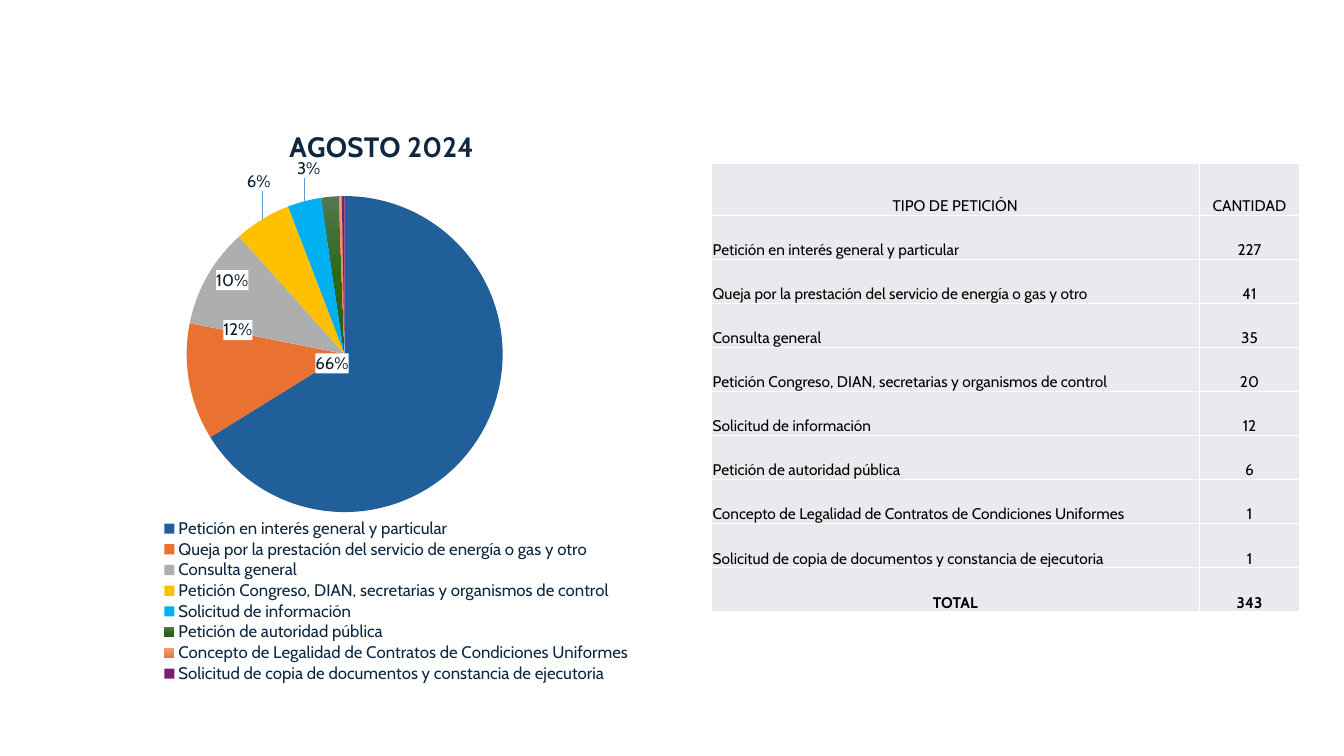
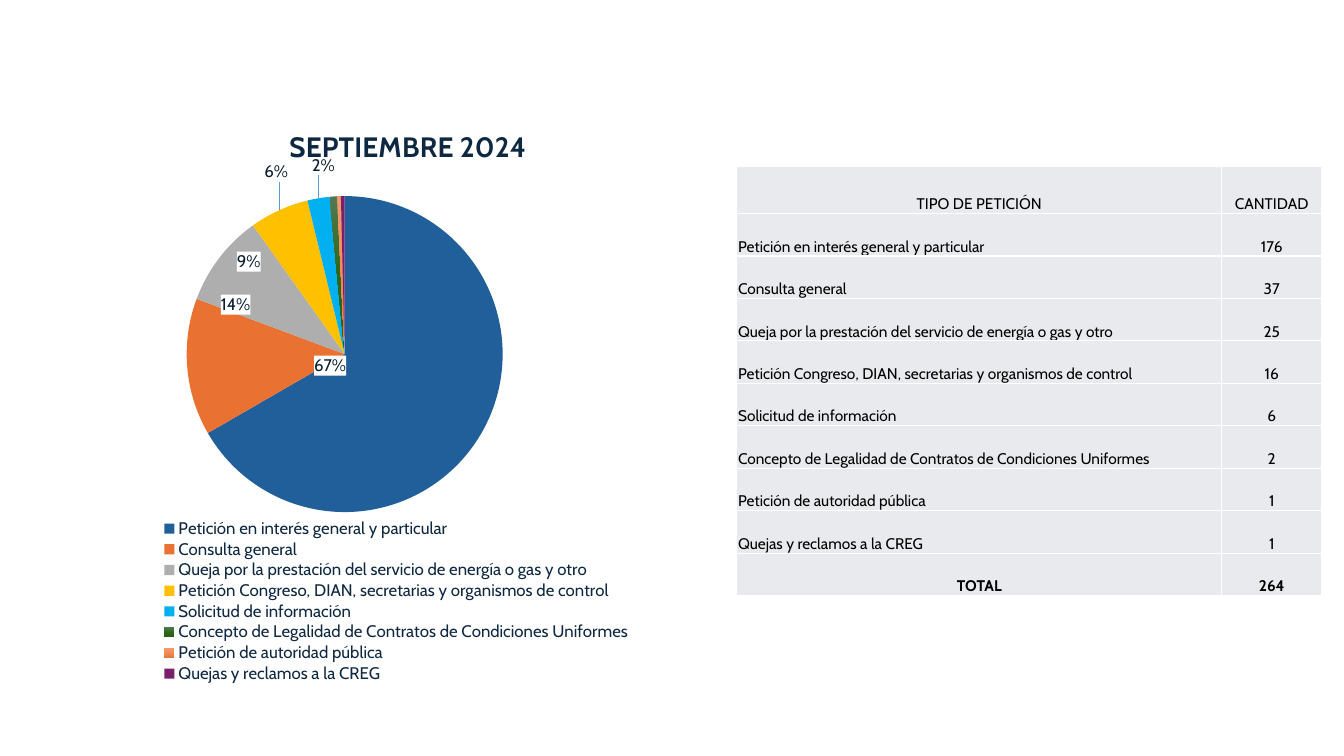
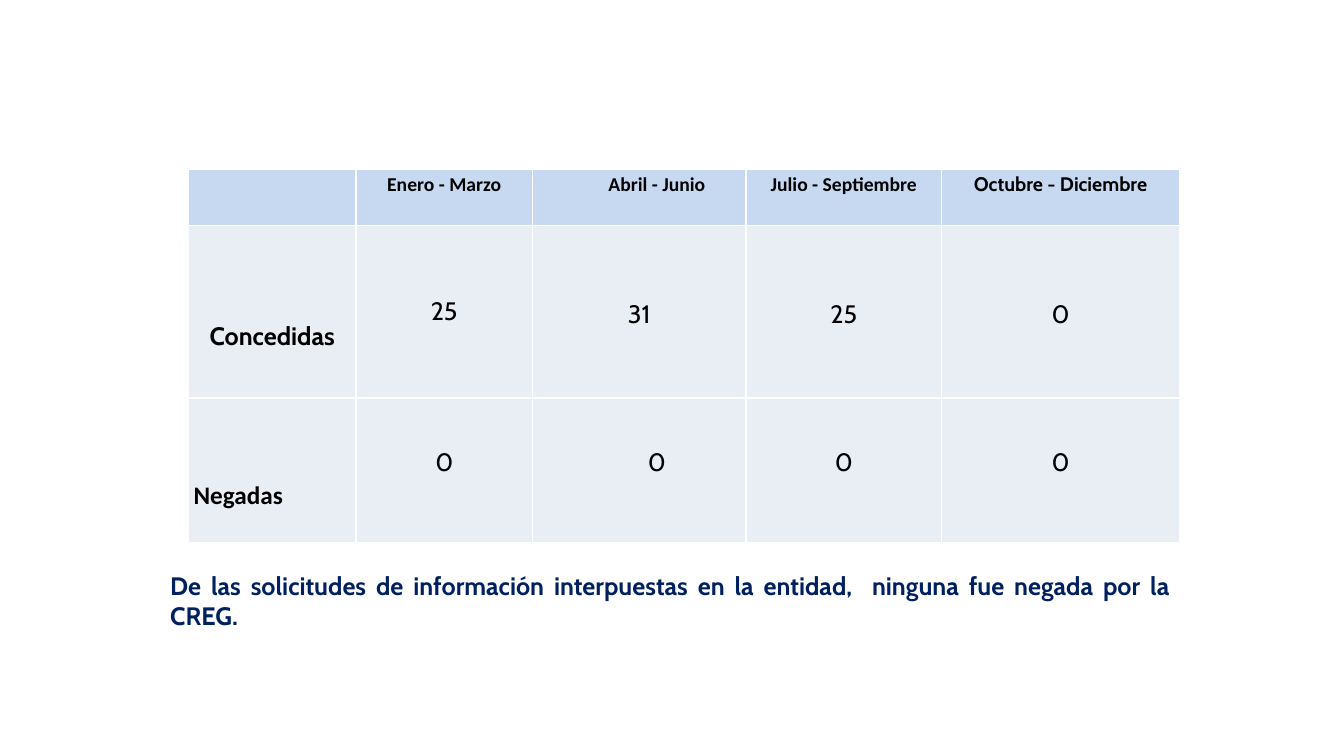
from copy import deepcopy

from lxml import etree
from pptx import Presentation
from pptx import util as u
from pptx.chart.data import CategoryChartData
from pptx.dml.color import RGBColor
from pptx.enum import chart as ch, text
from pptx.oxml import parse_xml
from pptx.oxml.ns import nsdecls, qn

NAVY = RGBColor(0x0E, 0x28, 0x41)
NOTE_BLUE = RGBColor(0x00, 0x20, 0x60)
BLACK = RGBColor(0x00, 0x00, 0x00)
WHITE = RGBColor(0xFF, 0xFF, 0xFF)
MIST = RGBColor(0xE8, 0xEA, 0xED)
SKY = RGBColor(0xC6, 0xD9, 0xF1)
ICE = RGBColor(0xE9, 0xED, 0xF4)
LABEL_INK = RGBColor(0x0B, 0x1E, 0x31)
LEADER = RGBColor(0x5B, 0x9B, 0xD5)
SLICES = [
    RGBColor(0x21, 0x5F, 0x9A), RGBColor(0xE9, 0x71, 0x32),
    RGBColor(0xAE, 0xAE, 0xAE), RGBColor(0xFF, 0xC0, 0x00),
    RGBColor(0x00, 0xB0, 0xF0),
    (RGBColor(0x55, 0x78, 0x4E), RGBColor(0x2D, 0x68, 0x18), RGBColor(0x27, 0x5F, 0x12)),
    (RGBColor(0xF1, 0x9B, 0x72), RGBColor(0xF5, 0x8B, 0x54), RGBColor(0xE2, 0x79, 0x42)),
    RGBColor(0x78, 0x20, 0x6E),
]
LABEL_SHIFTS = [(-0.3, -0.14), (0.12, -0.11), (0.08, 0.03), (0.02, -0.04), (0.03, -0.03)]
BOXED_LABELS = 3

LEFT, CENTER, JUSTIFY = (text.PP_ALIGN.LEFT, text.PP_ALIGN.CENTER, text.PP_ALIGN.JUSTIFY)
TOP, MIDDLE, BOTTOM = (text.MSO_ANCHOR.TOP, text.MSO_ANCHOR.MIDDLE, text.MSO_ANCHOR.BOTTOM)

GENERAL = "Petición en interés general y particular"
COMPLAINT = "Queja por la prestación del servicio de energía o gas y otro"
QUERY = "Consulta general"
CONGRESS = "Petición Congreso, DIAN, secretarias y organismos de control"
INFORMATION = "Solicitud de información"
AUTHORITY = "Petición de autoridad pública"
LEGALITY = "Concepto de Legalidad de Contratos de Condiciones Uniformes"
COPIES = "Solicitud de copia de documentos y constancia de ejecutoria"
CLAIMS = "Quejas y reclamos a la CREG"

AUGUST = {GENERAL: 227, COMPLAINT: 41, QUERY: 35, CONGRESS: 20, INFORMATION: 12,
          AUTHORITY: 6, LEGALITY: 1, COPIES: 1}
SEPTEMBER = {GENERAL: 176, QUERY: 37, COMPLAINT: 25, CONGRESS: 16, INFORMATION: 6,
             LEGALITY: 2, AUTHORITY: 1, CLAIMS: 1}


def apply(target, values):
    """Set each named attribute of the target."""
    for name, value in values.items():
        setattr(target, name, value)


def set_layout(parent, index, **places):
    """Give a chart part a manual layout."""
    for old in parent.findall(qn("c:layout")):
        parent.remove(old)
    marks = "".join(f'<c:{tag} val="{value}"/>' for tag, value in places.items())
    parent.insert(index, parse_xml(
        f'<c:layout {nsdecls("c")}><c:manualLayout>{marks}</c:manualLayout></c:layout>'))


def percent_labels(count):
    """Return the data label XML of a pie with count slices."""
    style = ('<c:txPr><a:bodyPr/><a:p><a:pPr><a:defRPr sz="1200">'
             f'<a:solidFill><a:srgbClr val="{LABEL_INK}"/></a:solidFill>'
             '<a:latin typeface="Cabin"/></a:defRPr></a:pPr>'
             '<a:endParaRPr lang="es-CO"/></a:p></c:txPr><c:dLblPos val="bestFit"/>')
    flags = "".join(
        f'<c:show{flag} val="{int(flag == "Percent")}"/>'
        for flag in ("LegendKey", "Val", "CatName", "SerName", "Percent", "BubbleSize"))
    number = '<c:numFmt formatCode="0%" sourceLinked="0"/>'
    box = f'<c:spPr><a:solidFill><a:srgbClr val="{WHITE}"/></a:solidFill></c:spPr>'
    labels = ""
    for i in range(count):
        if i < len(LABEL_SHIFTS):
            x, y = LABEL_SHIFTS[i]
            back = box if i < BOXED_LABELS else "<c:spPr><a:noFill/></c:spPr>"
            body = (f'<c:layout><c:manualLayout><c:x val="{x}"/><c:y val="{y}"/>'
                    f'</c:manualLayout></c:layout>{number}{back}{style}{flags}')
        else:
            body = '<c:delete val="1"/>'
        labels += f'<c:dLbl><c:idx val="{i}"/>{body}</c:dLbl>'
    return (f'<c:dLbls {nsdecls("c", "a")}>{labels}{number}{style}{flags}'
            '<c:showLeaderLines val="1"/><c:leaderLines><c:spPr><a:ln w="9525"><a:solidFill>'
            f'<a:srgbClr val="{LEADER}"/></a:solidFill></a:ln></c:spPr></c:leaderLines>'
            '</c:dLbls>')


class Report:
    """Hold the shared style and the current slide."""

    def __init__(self):
        """Start a wide presentation."""
        self.deck = Presentation()
        apply(self.deck, {"slide_width": u.Cm(33.87), "slide_height": u.Cm(19.05)})
        self.slide = None

    def new_slide(self):
        """Add a blank slide and make it current."""
        self.slide = self.deck.slides.add_slide(self.deck.slide_layouts[6])

    def put_text(self, paragraph, words, align, color=BLACK, size=18, bold=False,
                 font="Cabin", **spacing):
        """Fill a paragraph with one styled run."""
        apply(paragraph, {"alignment": align, **spacing})
        run = paragraph.add_run()
        run.text = words
        apply(run.font, {"name": font, "size": u.Pt(size), "bold": bold})
        run.font.color.rgb = color

    def table(self, left, top, widths, heights):
        """Add a plain table with lengths in centimetres and return it."""
        grid = self.slide.shapes.add_table(
            len(heights), len(widths), u.Cm(left), u.Cm(top),
            u.Cm(sum(widths)), u.Cm(sum(heights))).table
        apply(grid, {"first_row": False, "horz_banding": False})
        for column, width in zip(grid.columns, widths):
            column.width = u.Cm(width)
        for row, height in zip(grid.rows, heights):
            row.height = u.Cm(height)
        return grid

    def cell(self, cell, words, fill, align=CENTER, anchor=TOP, margins=(0, 0, 0, 0), **style):
        """Style a cell with white borders, margins in centimetres and text."""
        properties = cell._tc.get_or_add_tcPr()
        for side in "LRTB":
            line = etree.SubElement(properties, qn(f"a:ln{side}"), w="12700")
            paint = etree.SubElement(line, qn("a:solidFill"))
            etree.SubElement(paint, qn("a:srgbClr"), val=str(WHITE))
        cell.fill.solid()
        cell.fill.fore_color.rgb = fill
        cell.vertical_anchor = anchor
        apply(cell, {f"margin_{side}": u.Cm(length) for side, length in
                     zip(("left", "top", "right", "bottom"), margins)})
        if words:
            self.put_text(cell.text_frame.paragraphs[0], words, align, **style)

    def counts(self, petitions, left, top, widths, heights):
        """Add the table of petitions with its total."""
        rows = [("TIPO DE PETICIÓN", "CANTIDAD"), *petitions.items(),
                ("TOTAL", sum(petitions.values()))]
        grid = self.table(left, top, widths, heights)
        for r, row in enumerate(rows):
            for c, entry in enumerate(row):
                is_petition = c == 0 and entry in petitions
                self.cell(grid.cell(r, c), str(entry), MIST, LEFT if is_petition else CENTER,
                          BOTTOM, (0.03, 0.03, 0.03, 0), size=11, bold=r == len(rows) - 1)

    def pie(self, heading, petitions):
        """Add the pie of petition shares with its heading and legend."""
        data = CategoryChartData()
        data.categories = list(petitions)
        data.add_series("Series 1", list(petitions.values()))
        chart = self.slide.shapes.add_chart(
            ch.XL_CHART_TYPE.PIE, u.Cm(1.8), u.Cm(2.77), u.Cm(14.5), u.Cm(14.48), data).chart
        apply(chart.font, {"name": "Cabin", "size": u.Pt(10)})
        chart.font.color.rgb = BLACK
        title = chart.chart_title
        self.put_text(title.text_frame.paragraphs[0], heading, LEFT, NAVY, 20, True)
        title.include_in_layout = False
        set_layout(title._element, 1, xMode="edge", yMode="edge", x=0.37, y=0.02)

        chart.has_legend = True
        legend = chart.legend
        apply(legend, {"position": ch.XL_LEGEND_POSITION.RIGHT, "include_in_layout": False})
        apply(legend.font, {"name": "Cabin", "size": u.Pt(12)})
        legend.font.color.rgb = NAVY
        set_layout(legend._element, 1, xMode="edge", yMode="edge",
                   x=0.15, y=0.71, w=0.83, h=0.29)

        plot = chart.plots[0]
        plot.vary_by_categories = True
        set_layout(plot._element.getparent(), 0, layoutTarget="inner", xMode="edge",
                   yMode="edge", x=0, y=0.15, w=0.95, h=0.55)
        shares = plot.series[0]
        for i, color in enumerate(SLICES):
            fill = shares.points[i].format.fill
            if isinstance(color, tuple) and not isinstance(color, RGBColor):
                self.gradient(fill, color)
            else:
                fill.solid()
                fill.fore_color.rgb = color
        shares._element.find(qn("c:cat")).addprevious(
            parse_xml(percent_labels(len(petitions))))

    def gradient(self, fill, colors):
        """Paint a downward gradient of three even stops."""
        fill.gradient()
        fill.gradient_angle = 270
        last = fill.gradient_stops[1]._gs
        last.addprevious(deepcopy(last))
        for i, (stop, color) in enumerate(zip(fill.gradient_stops, colors)):
            stop.position = i / 2
            stop.color.rgb = color

    def note(self, words, left, top, width, height):
        """Add a bold justified note."""
        box = self.slide.shapes.add_textbox(u.Cm(left), u.Cm(top), u.Cm(width), u.Cm(height))
        box.text_frame.word_wrap = True
        self.put_text(box.text_frame.paragraphs[0], words, JUSTIFY, NOTE_BLUE, bold=True)

    def answers(self):
        """Add the table of granted and denied requests by quarter."""
        grid = self.table(4.75, 4.27, (4.22, 4.45, 5.38, 4.93, 6), (1.42, 4.34, 3.63))
        spacing = {"line_spacing": 1.15, "space_after": u.Pt(10)}
        quarters = ("", "Enero - Marzo", "Abril - Junio", "Julio - Septiembre",
                    "Octubre - Diciembre")
        for c, quarter in enumerate(quarters):
            indent = 1.02 if c == 2 else 0.13
            self.cell(grid.cell(0, c), quarter, SKY, margins=(indent, 0, 0.13, 0), size=14,
                      bold=True, font="Cabin" if c == 4 else "Calibri", **spacing)
            if c:
                granted = ("25", "31", "25", "0")[c - 1]
                self.cell(grid.cell(1, c), granted, ICE, anchor=MIDDLE,
                          margins=(0.13, 0, 0.13, 0.15 if c == 1 else 0), **spacing)
                self.cell(grid.cell(2, c), "0", ICE, margins=(indent, 1.12, 0.13, 0), **spacing)
        self.cell(grid.cell(1, 0), "Concedidas", ICE, margins=(0.13, 2.29, 0.13, 0),
                  bold=True, **spacing)
        self.cell(grid.cell(2, 0), "Negadas", ICE, LEFT, margins=(0.13, 1.97, 0.13, 0),
                  bold=True, font="Calibri", **spacing)


def main():
    """Build the three slides and save them."""
    report = Report()
    report.new_slide()
    report.pie("AGOSTO 2024", AUGUST)
    report.counts(AUGUST, 17.93, 4.13, (12.29, 2.54), [1.3] + [1.11] * 9)

    report.new_slide()
    report.pie("SEPTIEMBRE 2024", SEPTEMBER)
    report.counts(SEPTEMBER, 18.57, 4.2, (12.22, 2.52), [1.18] + [1.07] * 9)

    report.new_slide()
    report.answers()
    report.note("De las solicitudes de información interpuestas en la entidad,  "
                "ninguna fue negada por la CREG.", 4.04, 14.25, 25.7, 1.8)
    report.deck.save("out.pptx")


if __name__ == "__main__":
    main()
